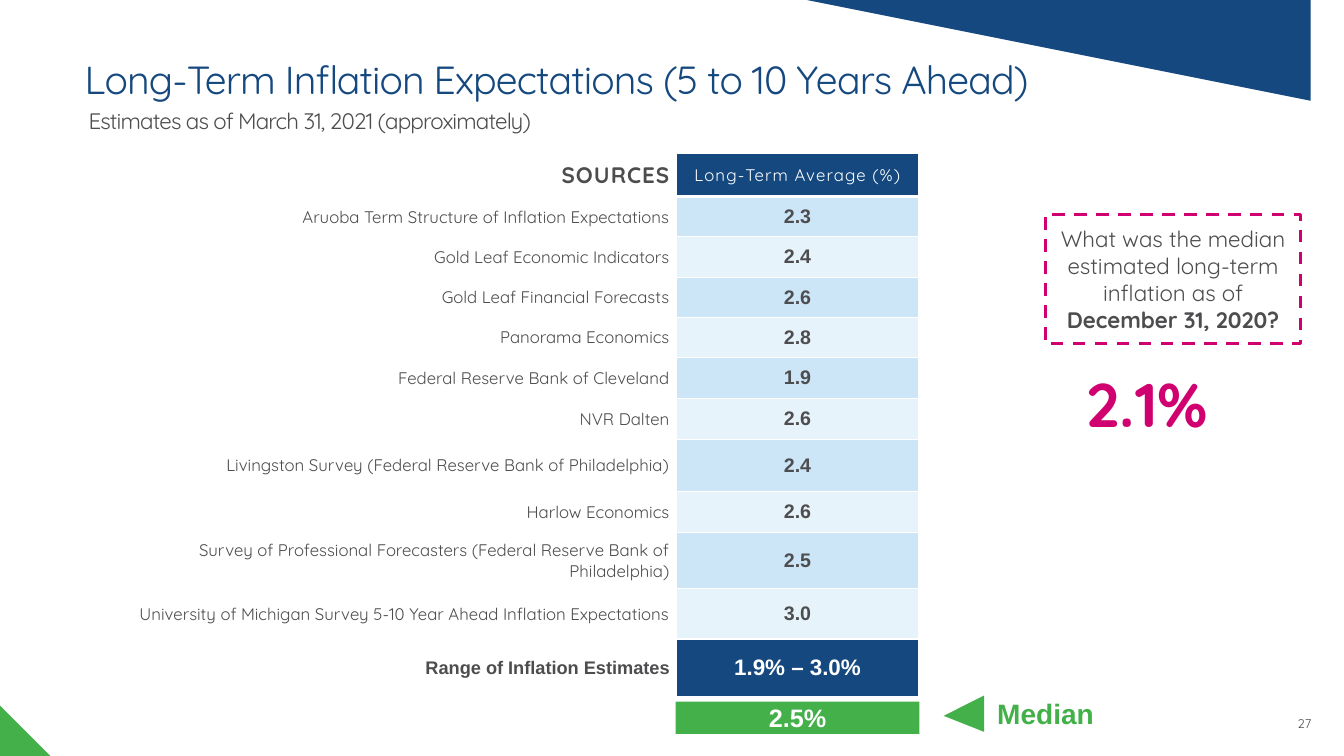
from lxml.etree import SubElement
from pptx import Presentation
from pptx.dml.color import RGBColor
from pptx.enum.dml import MSO_LINE
from pptx.enum.shapes import MSO_SHAPE
from pptx.enum.text import MSO_ANCHOR, MSO_AUTO_SIZE, PP_ALIGN
from pptx.oxml.ns import qn
from pptx.util import Inches, Pt

WIDTH, HEIGHT = 13.33, 7.5
NAVY, GREEN, PINK, GRAY, WHITE = "14487F", "43B049", "D00070", "4D4D4F", "FFFFFF"
BANDS = ("CCE5F7", "E7F3FB")
BODY, NUMBERS = "Quicksand", "Arial"

ESTIMATES = [  # source, long-term average, row height
    ("Aruoba Term Structure of Inflation Expectations", "2.3", 0.4),
    ("Gold Leaf Economic Indicators", "2.4", 0.4),
    ("Gold Leaf Financial Forecasts", "2.6", 0.4),
    ("Panorama Economics", "2.8", 0.4),
    ("Federal Reserve Bank of Cleveland", "1.9", 0.4),
    ("NVR Dalten", "2.6", 0.41),
    ("Livingston Survey (Federal Reserve Bank of Philadelphia)", "2.4", 0.52),
    ("Harlow Economics", "2.6", 0.4),
    ("Survey of Professional Forecasters (Federal Reserve Bank of Philadelphia)", "2.5", 0.56),
    ("University of Michigan Survey 5-10 Year Ahead Inflation Expectations", "3.0", 0.5),
]
HEADER_HEIGHT, RANGE_HEIGHT = 0.43, 0.57


def color(value):
    return RGBColor.from_string(value)


def inches(*lengths):
    return [Inches(length) for length in lengths]


def write(frame, text, size, font=BODY, fill=GRAY, bold=False,
          align=PP_ALIGN.LEFT, tracking=0):
    """Fill the first paragraph; tracking is in points."""
    paragraph = frame.paragraphs[0]
    paragraph.alignment = align
    run = paragraph.add_run()
    run.text = text
    if tracking:
        run.font._element.set("spc", str(round(tracking * 100)))
    paragraph.font.size = Pt(size)
    paragraph.font.name = font
    paragraph.font.bold = bold
    paragraph.font.color.rgb = color(fill)
    return paragraph


def set_frame(frame, anchor=MSO_ANCHOR.MIDDLE, margin=None):
    frame.word_wrap = True
    frame.auto_size = MSO_AUTO_SIZE.NONE
    frame.vertical_anchor = anchor
    if margin is not None:
        frame.margin_left = frame.margin_right = Inches(margin)
        frame.margin_top = frame.margin_bottom = Inches(margin)
    return frame


def add_text(slide, box, text, size, anchor=MSO_ANCHOR.MIDDLE, margin=None, **style):
    shape = slide.shapes.add_textbox(*inches(*box))
    return write(set_frame(shape.text_frame, anchor, margin), text, size, **style)


def add_preset(slide, kind, box, fill=None):
    shape = slide.shapes.add_shape(kind, *inches(*box))
    shape.shadow.inherit = False
    shape.line.fill.background()
    if fill:
        shape.fill.solid()
        shape.fill.fore_color.rgb = color(fill)
    else:
        shape.fill.background()
    set_frame(shape.text_frame)
    return shape


def add_corner(slide, points, fill):
    builder = slide.shapes.build_freeform(*points[0], scale=Inches(1))
    builder.add_line_segments(points[1:], close=True)
    shape = builder.convert_to_shape()
    shape.shadow.inherit = False
    shape.fill.solid()
    shape.fill.fore_color.rgb = color(fill)
    shape.line.fill.background()


def add_corners(slide):
    add_corner(slide, [(7.74, 0), (WIDTH, 1.2), (WIDTH, 0)], NAVY)
    add_corner(slide, [(0, 6.72), (0, HEIGHT), (0.85, HEIGHT)], GREEN)


def add_heading(slide, left, top, width):
    title = slide.shapes.title
    title.left, title.top, title.width, title.height = inches(left, top, width, 0.41)
    heading = write(set_frame(title.text_frame),
                    "Long-Term Inflation Expectations (5 to 10 Years Ahead)",
                    28, fill=NAVY, tracking=-0.6)
    subtitle = add_text(slide, (left + 0.04, top + 0.42, width, 0.41),
                        "Estimates as of March 31, 2021 (approximately)", 16, tracking=-0.6)
    heading.line_spacing = subtitle.line_spacing = 1.13


def add_border(cell, side, width):
    line = SubElement(cell._tc.get_or_add_tcPr(), qn(f"a:{side}"), w=str(Pt(width)))
    SubElement(SubElement(line, qn("a:solidFill")), qn("a:srgbClr"), val=WHITE)


def fill_row(table, index, label, value, fill, label_style, value_style):
    label_cell, value_cell = table.cell(index, 0), table.cell(index, 1)
    for cell in (label_cell, value_cell):
        cell.vertical_anchor = MSO_ANCHOR.MIDDLE
        cell.margin_left = cell.margin_right = Inches(0.07)
        cell.margin_top = cell.margin_bottom = Inches(0.07)
    label_cell.fill.background()
    add_border(value_cell, "lnR", 1)
    add_border(value_cell, "lnT", 2.25 if index == 1 else 1)
    add_border(value_cell, "lnB", 2.25 if index == 0 else 1)
    value_cell.fill.solid()
    value_cell.fill.fore_color.rgb = color(fill)
    write(label_cell.text_frame, label, align=PP_ALIGN.RIGHT, **label_style)
    write(value_cell.text_frame, value, align=PP_ALIGN.CENTER, **value_style)


def add_estimates(slide, left, top, columns):
    heights = [HEADER_HEIGHT, *(height for _, _, height in ESTIMATES), RANGE_HEIGHT]
    box = inches(left, top, sum(columns), sum(heights))
    table = slide.shapes.add_table(len(heights), len(columns), *box).table
    table.first_row = table.horz_banding = False
    for column, width in zip(table.columns, columns):
        column.width = Inches(width)
    for row, height in zip(table.rows, heights):
        row.height = Inches(height)

    fill_row(table, 0, "SOURCES", "Long-Term Average (%)", NAVY,
             dict(size=16, bold=True, tracking=0.8),
             dict(size=12, fill=WHITE, tracking=0.8))
    for index, (source, average, _) in enumerate(ESTIMATES, 1):
        fill_row(table, index, source, average, BANDS[(index - 1) % 2],
                 dict(size=12), dict(size=14, font=NUMBERS, bold=True))
    fill_row(table, len(heights) - 1, "Range of Inflation Estimates", "1.9% – 3.0%", NAVY,
             dict(size=13, font=NUMBERS, bold=True),
             dict(size=16, font=NUMBERS, fill=WHITE, bold=True))


def add_median(slide, left, top, width):
    bar = add_preset(slide, MSO_SHAPE.RECTANGLE, (left, top, width, 0.32), GREEN)
    write(bar.text_frame, "2.5%", 18, font=NUMBERS, fill=WHITE, bold=True,
          align=PP_ALIGN.CENTER)
    right = left + width
    pointer = add_preset(slide, MSO_SHAPE.ISOSCELES_TRIANGLE,
                         (right + 0.26, top - 0.08, 0.36, 0.4), GREEN)
    pointer.adjustments[0] = 0.44
    pointer.rotation = 270
    add_text(slide, (right + 0.58, top - 0.09, 1.34, 0.41), "Median", 20, margin=0,
             font=NUMBERS, fill=GREEN, bold=True, align=PP_ALIGN.CENTER)


def add_question(slide, left, top, width, height):
    frame = add_preset(slide, MSO_SHAPE.RECTANGLE, (left, top, width, height))
    frame.line.color.rgb = color(PINK)
    frame.line.width = Pt(2.25)
    frame.line.dash_style = MSO_LINE.DASH
    question = write(frame.text_frame, "What was the median estimated long-term inflation as of ",
                     16, align=PP_ALIGN.CENTER)
    date = question.add_run()
    date.text = "December 31, 2020?"
    date.font.bold = True
    add_text(slide, (left + 0.31, top + height + 0.17, 1.9, 0.84), "2.1%", 44,
             anchor=MSO_ANCHOR.TOP, fill=PINK, bold=True)


def main():
    presentation = Presentation()
    presentation.slide_width, presentation.slide_height = inches(WIDTH, HEIGHT)
    slide = presentation.slides.add_slide(presentation.slide_layouts[5])
    add_corners(slide)
    add_text(slide, (12.87, 7.06, 0.46, 0.19), "27", 9, anchor=MSO_ANCHOR.BOTTOM, margin=0)
    add_estimates(slide, 0.96, 1.52, (5.75, 2.4))
    add_median(slide, 6.7, 6.96, 2.42)
    add_heading(slide, 0.74, 0.55, 11.34)
    add_question(slide, 10.37, 2.13, 2.53, 1.28)
    presentation.save("out.pptx")


if __name__ == "__main__":
    main()
